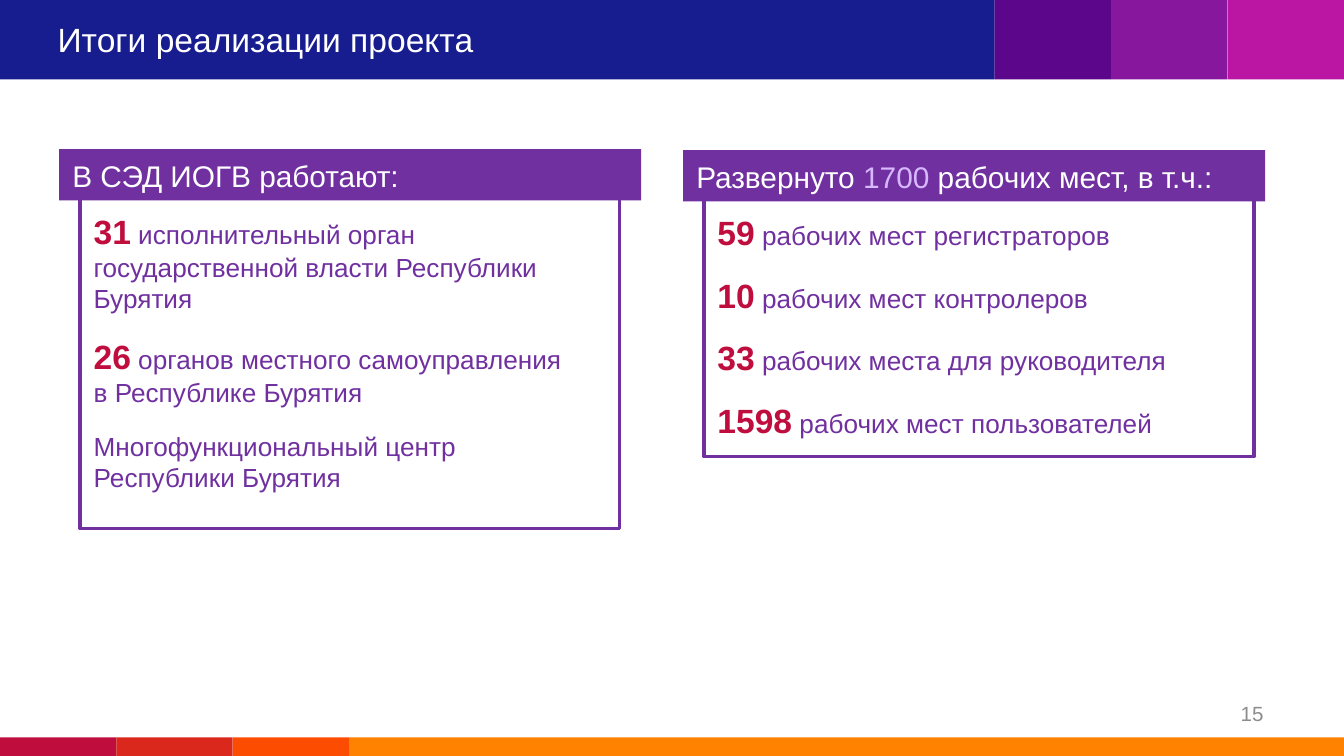
from dataclasses import dataclass

from pptx import Presentation
from pptx.dml.color import RGBColor
from pptx.enum import shapes, text
from pptx.util import Cm, Pt


@dataclass(frozen=True)
class Theme:
    font: str = "Arial"
    white: str = "FFFFFF"
    purple: str = "7030A0"
    lilac: str = "D7B8FF"
    red: str = "BF0D3E"
    gray: str = "8C8C8C"
    top: tuple = ("171C8F", "5C068C", "87189D", "BB16A3")
    bottom: tuple = ("BF0D3E", "DA291C", "FC4C02", "FF8200")
    title: int = 18
    head: int = 16
    body: int = 14
    number: int = 11


T = Theme()
WIDTH, HEIGHT = 25.4, 14.29
WIDE, NARROW = 18.8, 2.2


def add_rect(s, box, fill, line=None):
    sp = s.shapes.add_shape(shapes.MSO_SHAPE.RECTANGLE, *map(Cm, box))
    sp.shadow.inherit = False
    sp.fill.solid()
    sp.fill.fore_color.rgb = RGBColor.from_string(fill)
    if line:
        sp.line.color.rgb = RGBColor.from_string(line)
        sp.line.width = Pt(2)
    else:
        sp.line.fill.background()
    return sp


def add_text(s, box, paragraphs, size, color, after=0,
             anchor=text.MSO_ANCHOR.TOP, align=text.PP_ALIGN.LEFT):
    tf = s.shapes.add_textbox(*map(Cm, box)).text_frame
    tf.word_wrap = True
    tf.vertical_anchor = anchor
    for i, runs in enumerate(paragraphs):
        p = tf.paragraphs[0] if i == 0 else tf.add_paragraph()
        p.alignment = align
        p.space_after = Pt(after)
        for words, own in runs:
            r = p.add_run()
            r.text = words
            r.font.name = T.font
            r.font.size = Pt(own.get("size", size))
            r.font.bold = own.get("bold", False)
            r.font.color.rgb = RGBColor.from_string(own.get("color", color))


def add_stripe(s, box, widths, colors):
    x, y, _, h = box
    for w, color in zip(widths, colors):
        add_rect(s, (x, y, w, h), color)
        x += w


def add_title(s, box, title):
    add_text(s, box, [[(title, {})]], T.title, T.white,
             anchor=text.MSO_ANCHOR.MIDDLE)


def add_card(s, box, heading, heading_width, items, text_width):
    x, y, w, h = box
    head_w, head_h, indent, overlap = 11, 0.97, 0.4, 0.18
    body_y = y + head_h - overlap
    add_rect(s, (x + indent, body_y, w, h), T.white, T.purple)
    count = {"size": T.title, "bold": True, "color": T.red}
    paragraphs = [
        ([(number, count)] if number else []) + [(label, {})]
        for number, label in items
    ]
    add_text(s, (x + indent, body_y + 0.25, text_width, h - 0.5),
             paragraphs, T.body, T.purple, after=12)
    add_rect(s, (x, y, head_w, head_h), T.purple)
    add_text(s, (x, y + 0.03, heading_width, 0.94), [heading], T.head, T.white)


def add_number(s, box, number):
    add_text(s, box, [[(number, {})]], T.number, T.gray,
             anchor=text.MSO_ANCHOR.MIDDLE, align=text.PP_ALIGN.RIGHT)


def main():
    prs = Presentation()
    prs.slide_width, prs.slide_height = Cm(WIDTH), Cm(HEIGHT)
    s = prs.slides.add_slide(prs.slide_layouts[6])
    add_stripe(s, (0, 0, WIDTH, 1.5), [WIDE] + [NARROW] * 3, T.top)
    add_stripe(s, (0, 13.94, WIDTH, 0.35), [NARROW] * 3 + [WIDE], T.bottom)
    add_title(s, (0.84, 0.38, 21.67, 0.71), "Итоги реализации проекта")
    add_card(s, (1.12, 2.82, 10.19, 6.38),
             [("В СЭД ИОГВ работают:", {})], 7,
             [("31", " исполнительный орган государственной власти Республики Бурятия"),
              ("26", " органов местного самоуправления в Республике Бурятия"),
              ("", "Многофункциональный центр Республики Бурятия")], 9.6)
    add_card(s, (12.91, 2.84, 10.39, 5),
             [("Развернуто ", {}), ("1700 ", {"color": T.lilac}),
              ("рабочих мест, в т.ч.:", {})], 10.8,
             [("59", " рабочих мест регистраторов"),
              ("10", " рабочих мест контролеров"),
              ("33", " рабочих места для руководителя"),
              ("1598", " рабочих мест пользователей")], 10.19)
    add_number(s, (18.21, 13.23, 5.92, 0.51), "15")
    prs.save("out.pptx")


if __name__ == "__main__":
    main()
